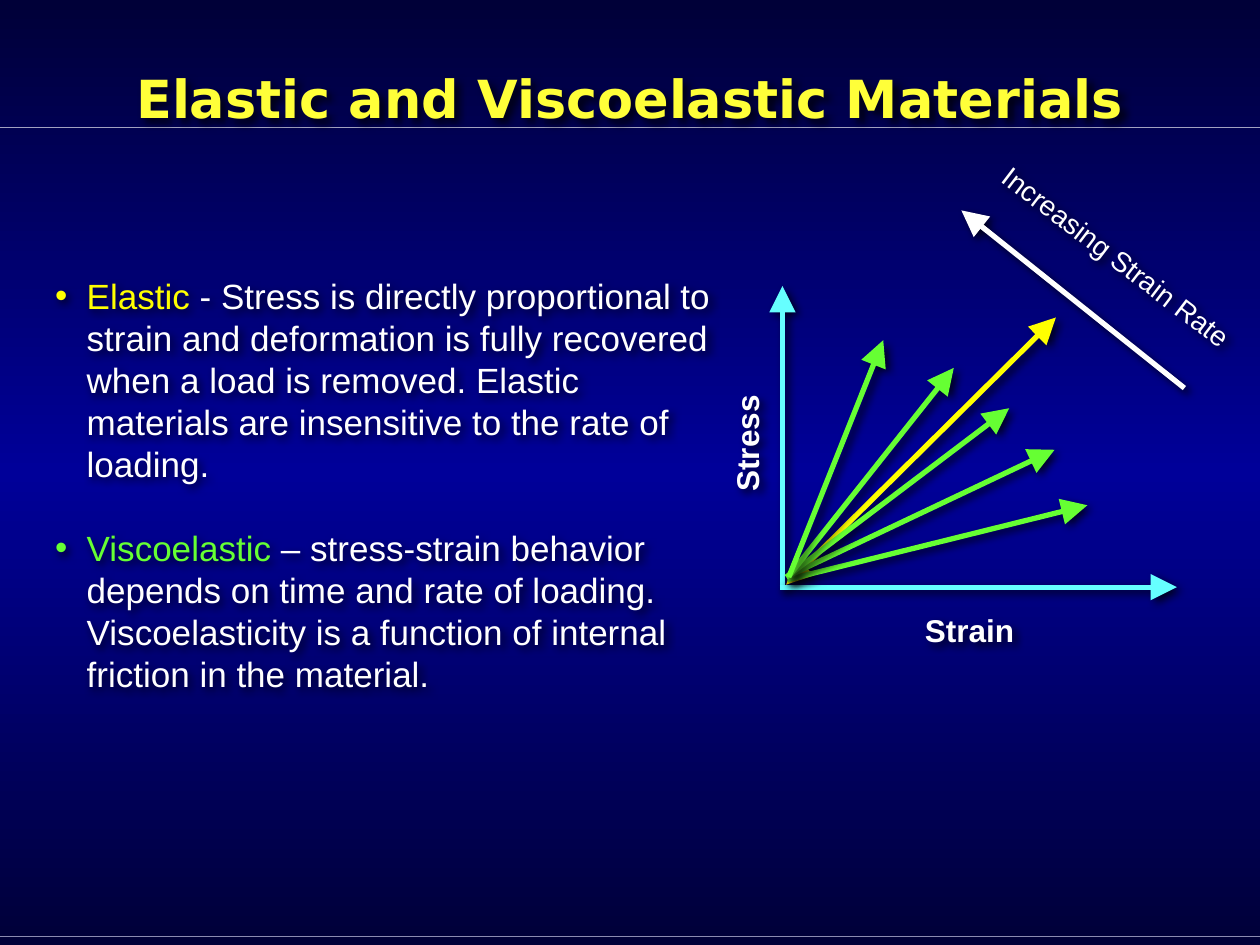
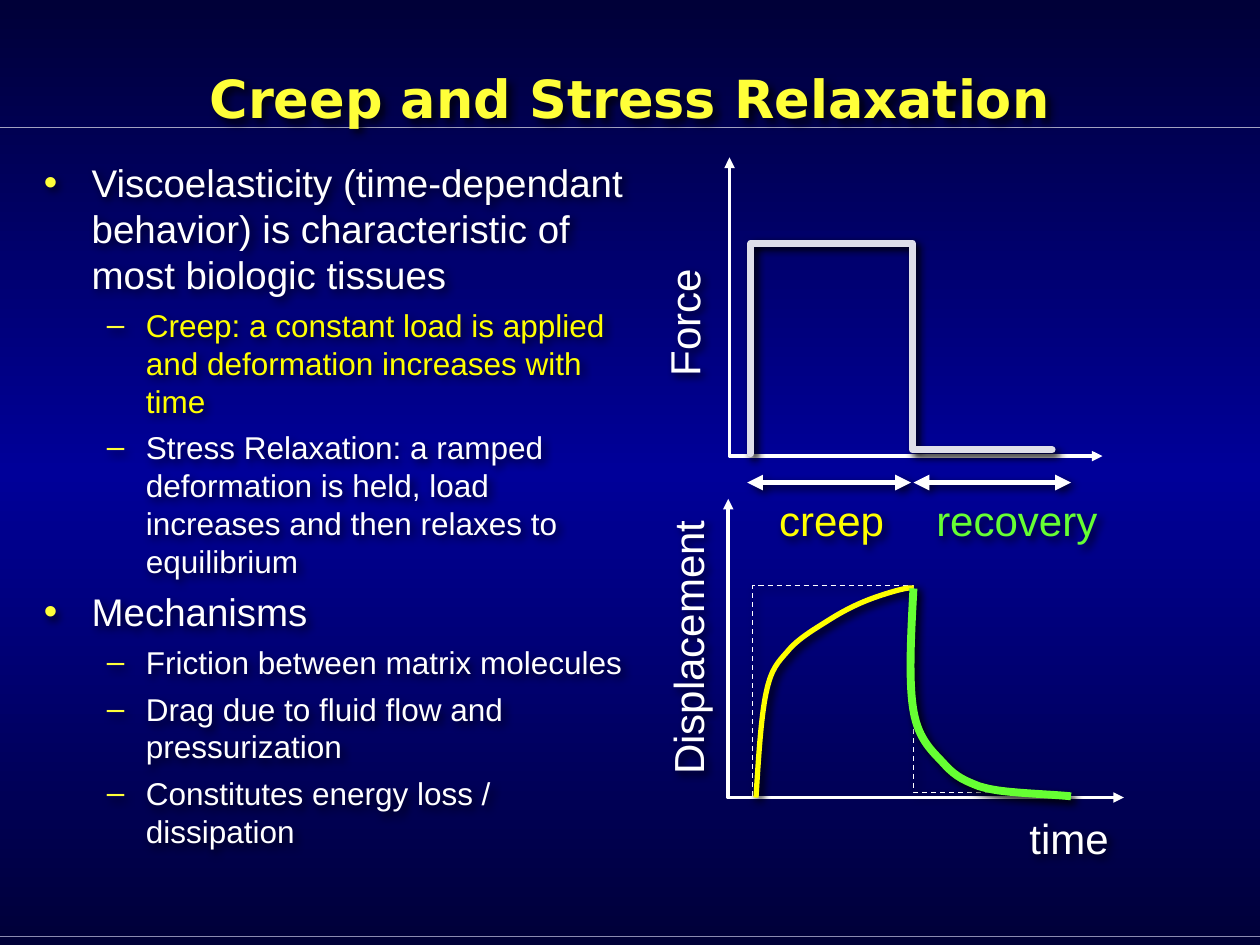
from copy import deepcopy
from dataclasses import dataclass
from typing import NamedTuple, Optional

from lxml.etree import SubElement
from pptx import Presentation
from pptx.dml.color import RGBColor
from pptx.enum.dml import MSO_LINE
from pptx.enum.shapes import MSO_CONNECTOR
from pptx.enum.text import MSO_ANCHOR, PP_ALIGN
from pptx.oxml.ns import qn
from pptx.util import Inches, Pt


@dataclass(frozen=True)
class Theme:
    edge: str = "000038"
    middle: str = "000099"
    title: str = "FFFF39"
    white: str = "FFFFFF"
    yellow: str = "FFFF00"
    green: str = "66FF33"
    cyan: str = "66FFFF"
    silver: str = "DFDFE9"
    header_rule: str = "A2A2C0"
    footer_rule: str = "8B8BB1"
    title_font: str = "DejaVu Sans"
    body_font: str = "Arial"
    title_size: float = 30
    definition_size: float = 20
    level_sizes: tuple = (22, 18)
    rate_size: float = 16
    axis_size: float = 18
    graph_size: float = 24


THEME = Theme()


class Line(NamedTuple):
    points: list  # (x, y) in inches
    color: str
    width: float = 3
    heads: str = ""  # "start", "end" or "both"
    head_size: str = "med"
    shadow: Optional[int] = 75  # opacity in percent
    dashed: bool = False
    curved: bool = False  # points after the first are Bézier triplets
    rounded: bool = False


class Label(NamedTuple):
    text: str
    left: float
    top: float
    width: float
    height: float
    size: float
    color: str = THEME.white
    rotation: float = 0
    bold: bool = False
    spacing: float = 1.0
    font: str = THEME.body_font


class Bullet(NamedTuple):
    runs: list  # (text, color)
    size: float
    mark: str
    mark_color: str
    margin: float
    hanging: float
    before: float = 0
    after: float = 0


def set_shadow(shape, opacity: Optional[int]) -> None:
    """Give the shape a soft shadow, or an empty effect list."""
    effects = SubElement(shape._element.spPr, qn("a:effectLst"))
    if opacity is None:
        return
    shadow = SubElement(effects, qn("a:outerShdw"), blurRad=str(Pt(5)),
                        dist=str(Pt(3)), dir="2700000", algn="ctr", rotWithShape="0")
    color = SubElement(shadow, qn("a:srgbClr"), val="000000")
    SubElement(color, qn("a:alpha"), val=str(opacity * 1000))


def curve_segments(shape) -> None:
    """Turn each three straight segments of a freeform into one Bézier curve."""
    outline = shape._element.find(".//" + qn("a:path"))
    steps = outline.findall(qn("a:lnTo"))
    for first in range(0, len(steps), 3):
        curve = SubElement(outline, qn("a:cubicBezTo"))
        for step in steps[first:first + 3]:
            curve.append(step[0])
            outline.remove(step)


def draw_line(slide, line: Line) -> None:
    points = [(Inches(x), Inches(y)) for x, y in line.points]
    if len(points) == 2:
        shape = slide.shapes.add_connector(MSO_CONNECTOR.STRAIGHT, *points[0], *points[1])
    else:
        builder = slide.shapes.build_freeform(*points[0])
        builder.add_line_segments(points[1:], close=False)
        shape = builder.convert_to_shape()
        shape.fill.background()
    if line.curved:
        curve_segments(shape)
    shape.line.color.rgb = RGBColor.from_string(line.color)
    shape.line.width = Pt(line.width)
    if line.dashed:
        shape.line.dash_style = MSO_LINE.DASH
    stroke = shape.line._get_or_add_ln()
    if line.rounded:
        stroke.set("cap", "rnd")
        SubElement(stroke, qn("a:round"))
    for tag, end in (("a:headEnd", "start"), ("a:tailEnd", "end")):
        if line.heads in (end, "both"):
            SubElement(stroke, qn(tag), type="triangle",
                       w=line.head_size, len=line.head_size)
    set_shadow(shape, line.shadow)


def add_box(slide, left: float, top: float, width: float, height: float):
    box = slide.shapes.add_textbox(Inches(left), Inches(top), Inches(width), Inches(height))
    box.text_frame.word_wrap = True
    set_shadow(box, 75)
    return box


def draw_label(slide, label: Label) -> None:
    box = add_box(slide, label.left, label.top, label.width, label.height)
    box.rotation = label.rotation
    box.text_frame.word_wrap = False
    box.text_frame.vertical_anchor = MSO_ANCHOR.MIDDLE
    paragraph = box.text_frame.paragraphs[0]
    paragraph.text = label.text
    paragraph.alignment = PP_ALIGN.CENTER
    paragraph.line_spacing = label.spacing
    font = paragraph.font
    font.name, font.size, font.bold = label.font, Pt(label.size), label.bold
    font.color.rgb = RGBColor.from_string(label.color)


def draw_bullets(slide, left: float, top: float, width: float, height: float,
                 bullets: list[Bullet]) -> None:
    frame = add_box(slide, left, top, width, height).text_frame
    for index, bullet in enumerate(bullets):
        paragraph = frame.add_paragraph() if index else frame.paragraphs[0]
        properties = paragraph._p.get_or_add_pPr()
        properties.set("marL", str(Inches(bullet.margin)))
        properties.set("indent", str(-Inches(bullet.hanging)))
        mark_color = SubElement(properties, qn("a:buClr"))
        SubElement(mark_color, qn("a:srgbClr"), val=bullet.mark_color)
        SubElement(properties, qn("a:buFont"), typeface=THEME.body_font)
        SubElement(properties, qn("a:buChar"), char=bullet.mark)
        if index:
            paragraph.space_before = Pt(bullet.before)
        paragraph.space_after = Pt(bullet.after)
        paragraph.font.name = THEME.body_font
        paragraph.font.size = Pt(bullet.size)
        for text, color in bullet.runs:
            run = paragraph.add_run()
            run.text = text
            run.font.color.rgb = RGBColor.from_string(color)


def add_titled_slide(prs, title: str):
    """Add a slide with the shared gradient, rules and title."""
    slide = prs.slides.add_slide(prs.slide_layouts[6])
    fill = slide.background.fill
    fill.gradient()
    fill.gradient_angle = 90
    stops = slide._element.find(".//" + qn("a:gsLst"))
    stops.append(deepcopy(stops[0]))
    gradient = ((0, THEME.edge), (0.5, THEME.middle), (1, THEME.edge))
    for stop, (position, color) in zip(fill.gradient_stops, gradient):
        stop.position = position
        stop.color.rgb = RGBColor.from_string(color)
    for y, color in ((7.43, THEME.footer_rule), (1.01, THEME.header_rule)):
        draw_line(slide, Line([(0, y), (10, y)], color, 0.75, shadow=None))
    draw_label(slide, Label(title, 0.5, 0.15, 9, 1.25, THEME.title_size, THEME.title,
                            bold=True, font=THEME.title_font))
    return slide


def definition(term: str, color: str, meaning: str) -> Bullet:
    return Bullet([(term, color), (meaning, THEME.white)], THEME.definition_size,
                  "•", color, 0.25, 0.25, before=24)


def outline_item(level: int, text: str, color: str = THEME.white) -> Bullet:
    margin, hanging = ((0.38, 0.38), (0.81, 0.31))[level]
    return Bullet([(text, color)], THEME.level_sizes[level], "•–"[level], THEME.title,
                  margin, hanging, before=3, after=2)


def build_materials(prs) -> None:
    slide = add_titled_slide(prs, "Elastic and Viscoelastic Materials")
    draw_bullets(slide, 0.34, 2.13, 5.5, 3.77, [
        definition("Elastic", THEME.yellow,
                   " - Stress is directly proportional to strain and deformation is fully "
                   "recovered when a load is removed. Elastic materials are insensitive to "
                   "the rate of loading."),
        definition("Viscoelastic ", THEME.green,
                   "– stress-strain behavior depends on time and rate of loading. "
                   "Viscoelasticity is a function of internal friction in the material."),
    ])
    stress_axis = [(6.21, 4.68), (6.21, 2.27)]
    strain_axis = [(6.19, 4.66), (9.34, 4.66)]
    elastic = [(6.24, 4.64), (8.38, 2.52)]
    viscoelastic = [
        [(6.25, 4.6), (8.63, 4.01)],
        [(6.26, 4.57), (8.37, 3.57)],
        [(6.24, 4.58), (8.01, 3.24)],
        [(6.27, 4.56), (7.57, 2.92)],
        [(6.26, 4.58), (7.01, 2.7)],
    ]
    strain_rate = [(9.4, 3.08), (7.63, 1.67)]
    for axis in (stress_axis, strain_axis):
        draw_line(slide, Line(axis, THEME.cyan, heads="end", head_size="lg"))
    draw_line(slide, Line(elastic, THEME.yellow, heads="both", head_size="lg"))
    for response in viscoelastic:
        draw_line(slide, Line(response, THEME.green, heads="end", head_size="lg"))
    draw_line(slide, Line(strain_rate, THEME.white, heads="end", head_size="lg"))
    for label in (
        Label("Strain", 7.24, 4.8, 0.91, 0.4, THEME.axis_size, bold=True),
        Label("Stress", 5.44, 3.32, 0.97, 0.4, THEME.axis_size, rotation=270, bold=True),
        Label("Increasing Strain Rate", 7.66, 1.85, 2.4, 0.37, THEME.rate_size,
              rotation=37.3),
    ):
        draw_label(slide, label)


def build_creep(prs) -> None:
    slide = add_titled_slide(prs, "Creep and Stress Relaxation")
    draw_bullets(slide, 0.25, 1.21, 4.84, 6.09, [
        outline_item(0, "Viscoelasticity (time-dependant behavior) is characteristic of "
                        "most biologic tissues"),
        outline_item(1, "Creep: a constant load is applied and deformation increases "
                        "with time", THEME.yellow),
        outline_item(1, "Stress Relaxation: a ramped deformation is held, load increases "
                        "and then relaxes to equilibrium"),
        outline_item(0, "Mechanisms"),
        outline_item(1, "Friction between matrix molecules"),
        outline_item(1, "Drag due to fluid flow and pressurization"),
        outline_item(1, "Constitutes energy loss / dissipation"),
    ])
    force_axes = [(5.79, 1.25), (5.79, 3.62), (8.75, 3.62)]
    displacement_axes = [(5.78, 3.96), (5.78, 6.33), (8.92, 6.33)]
    load = [(5.96, 3.6), (5.96, 1.93), (7.24, 1.93), (7.24, 3.57), (8.35, 3.57)]
    ideal_response = [(x + 0.01, y + 2.72) for x, y in load]
    creep_span = [(7.23, 3.83), (5.93, 3.83)]
    recovery_span = [(7.25, 3.83), (8.5, 3.83)]
    creep = [(6, 6.33), (6.02, 6.01), (6.04, 5.69), (6.08, 5.5),
             (6.12, 5.31), (6.17, 5.26), (6.25, 5.17),
             (6.33, 5.07), (6.47, 4.99), (6.58, 4.92),
             (6.69, 4.85), (6.81, 4.79), (6.92, 4.75),
             (7.03, 4.71), (7.22, 4.65), (7.25, 4.67)]
    recovery = [(7.25, 4.67), (7.23, 5.04), (7.21, 5.41), (7.25, 5.64),
                (7.29, 5.88), (7.41, 5.97), (7.5, 6.07),
                (7.59, 6.17), (7.67, 6.2), (7.77, 6.24),
                (7.87, 6.27), (7.96, 6.28), (8.08, 6.29),
                (8.2, 6.3), (8.41, 6.31), (8.5, 6.32)]
    draw_line(slide, Line(ideal_response, THEME.white, 0.75, shadow=100, dashed=True))
    for axes in (force_axes, displacement_axes):
        draw_line(slide, Line(axes, THEME.white, 2, heads="both", shadow=None))
    draw_line(slide, Line(load, THEME.silver, 4, shadow=100, rounded=True))
    for label in (
        ("Force", 4.85, 2.33, 1.2, 0.46, THEME.white, 270),
        ("Displacement", 4.37, 4.91, 2.22, 0.46, THEME.white, 270),
        ("time", 8.07, 6.44, 0.83, 0.46, THEME.white, 0),
        ("creep", 6, 3.92, 1.2, 0.46, THEME.yellow, 0),
        ("recovery", 7.33, 3.92, 1.48, 0.46, THEME.green, 0),
    ):
        text, left, top, width, height, color, rotation = label
        draw_label(slide, Label(text, left, top, width, height, THEME.graph_size, color,
                                rotation, spacing=0.9))
    for span in (creep_span, recovery_span):
        draw_line(slide, Line(span, THEME.white, heads="both"))
    draw_line(slide, Line(creep, THEME.yellow, shadow=100, curved=True))
    draw_line(slide, Line(recovery, THEME.green, 4.5, shadow=100, curved=True))


def main() -> None:
    prs = Presentation()
    prs.slide_width, prs.slide_height = Inches(10), Inches(7.5)
    build_materials(prs)
    build_creep(prs)
    prs.save("out.pptx")


if __name__ == "__main__":
    main()
